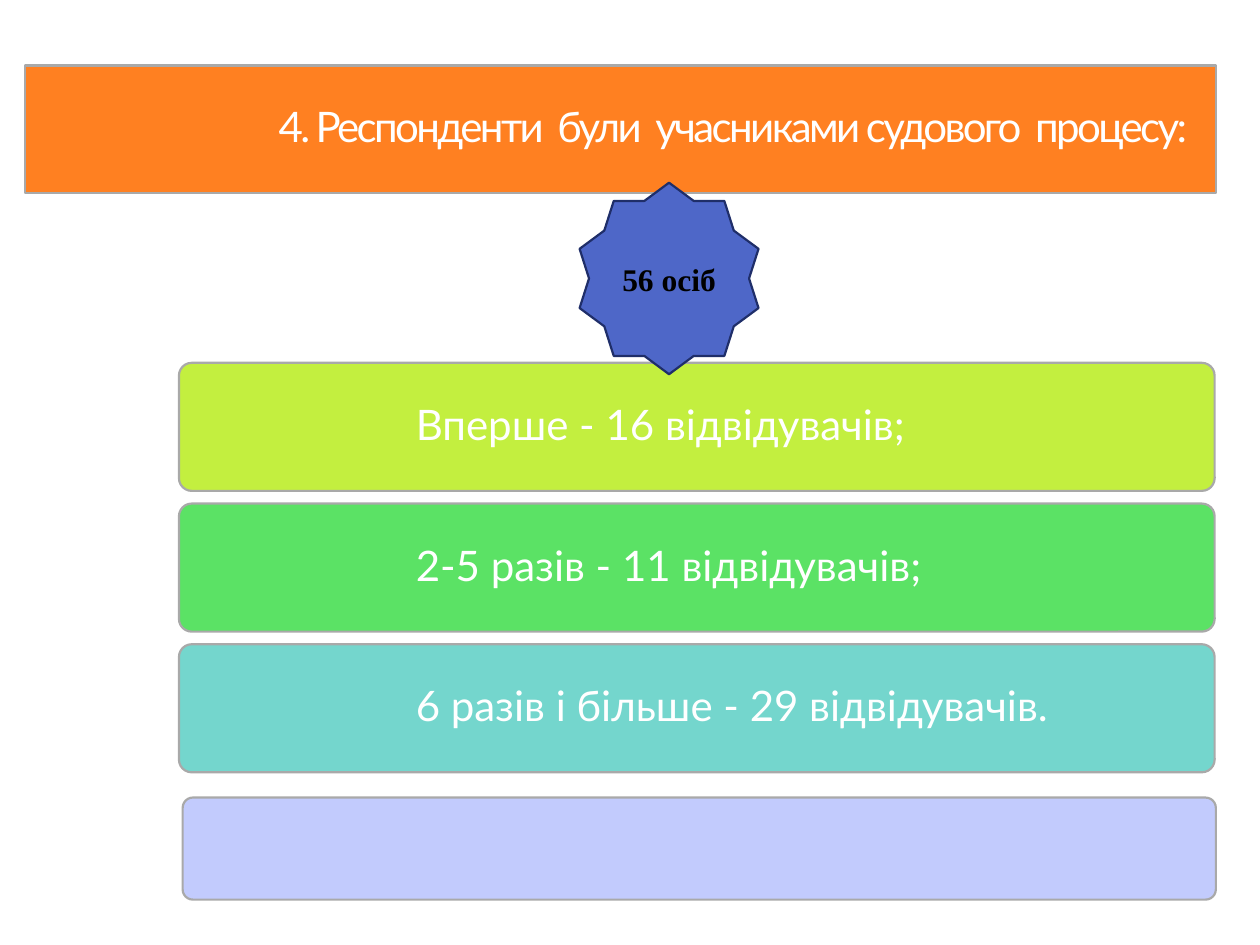
import pptx
import pptx.dml.color
import pptx.enum.shapes
import pptx.enum.text
import pptx.util
from pptx.oxml.ns import qn

Inches = pptx.util.Inches
Pt = pptx.util.Pt
SHAPE = pptx.enum.shapes.MSO_SHAPE
ALIGN = pptx.enum.text.PP_ALIGN

COLORS = {
    "title": "FF8021", "first": "C3EF3F", "several": "5BE265",
    "many": "74D6CD", "empty": "C2CBFD", "bar_line": "A9A9A9",
    "star": "4E67C8", "star_line": "1F2E69",
    "white": "FFFFFF", "black": "000000",
}
ANSWERS = [
    ("Вперше - 16 відвідувачів;", "first"),
    ("2-5 разів - 11 відвідувачів;", "several"),
    ("6 разів і більше - 29 відвідувачів.", "many"),
]


def rgb(name):
    return pptx.dml.color.RGBColor.from_string(COLORS[name])


def paint(sp, fill, line):
    sp.fill.solid()
    sp.fill.fore_color.rgb = rgb(fill)
    sp.line.color.rgb = rgb(line)
    sp.line.width = Pt(1.25)


def write(sp, text, size, font, color, align):
    tf = sp.text_frame
    tf.word_wrap = True
    tf.auto_size = pptx.enum.text.MSO_AUTO_SIZE.NONE
    tf.vertical_anchor = pptx.enum.text.MSO_ANCHOR.MIDDLE
    p = tf.paragraphs[0]
    p.text = text
    p.alignment = align
    p.font.size = Pt(size)
    p.font.name = font
    p.font.color.rgb = rgb(color)
    return p


def write_bar(sp, text, align):
    tf = sp.text_frame
    tf.margin_left = Inches(1.85)
    tf.margin_right = tf.margin_top = tf.margin_bottom = Inches(0.07)
    p = write(sp, text, 24, "Lato", "white", align)
    p.line_spacing = 0.9
    return p


def add_shape(s, kind, box, fill, line):
    sp = s.shapes.add_shape(kind, *map(Inches, box))
    sp.shadow.inherit = False
    paint(sp, fill, line)
    return sp


def add_bar(s, box, fill):
    sp = add_shape(s, SHAPE.ROUNDED_RECTANGLE, box, fill, "bar_line")
    sp.adjustments[0] = 0.1
    return sp


def add_title(s, box, text):
    sp = s.shapes.title
    sp.left, sp.top, sp.width, sp.height = map(Inches, box)
    geom = sp.element.spPr.makeelement(qn("a:prstGeom"), {"prst": "roundRect"})
    guides = geom.makeelement(qn("a:avLst"), {})
    guides.append(geom.makeelement(qn("a:gd"), {"name": "adj", "fmla": "val 10000"}))
    geom.append(guides)
    sp.element.spPr.append(geom)
    paint(sp, "title", "bar_line")
    p = write_bar(sp, text, ALIGN.CENTER)
    p.runs[0].font._element.set("spc", "-150")


def add_answers(s, box, answers):
    left, top, width, height = box
    gap = 0.1
    bar_h = (height - gap * (len(answers) - 1)) / len(answers)
    for i, (text, fill) in enumerate(answers):
        sp = add_bar(s, (left, top + i * (bar_h + gap), width, bar_h), fill)
        write_bar(sp, text, ALIGN.LEFT)


def add_total(s, box, text):
    sp = add_shape(s, SHAPE.STAR_10_POINT, box, "star", "star_line")
    p = write(sp, text, 18, "Times New Roman", "black", ALIGN.CENTER)
    p.font.bold = True


def main():
    prs = pptx.Presentation()
    prs.slide_width, prs.slide_height = Inches(10), Inches(7.5)
    s = prs.slides.add_slide(prs.slide_layouts[5])
    add_title(s, (0.2, 0.52, 9.45, 1.01),
              "4. Респонденти  були  учасниками судового  процесу:")
    add_answers(s, (1.42, 2.88, 8.22, 3.25), ANSWERS)
    add_bar(s, (1.45, 6.33, 8.2, 0.81), "empty")
    add_total(s, (4.6, 1.45, 1.42, 1.52), "56 осіб")
    prs.save("out.pptx")


if __name__ == "__main__":
    main()
